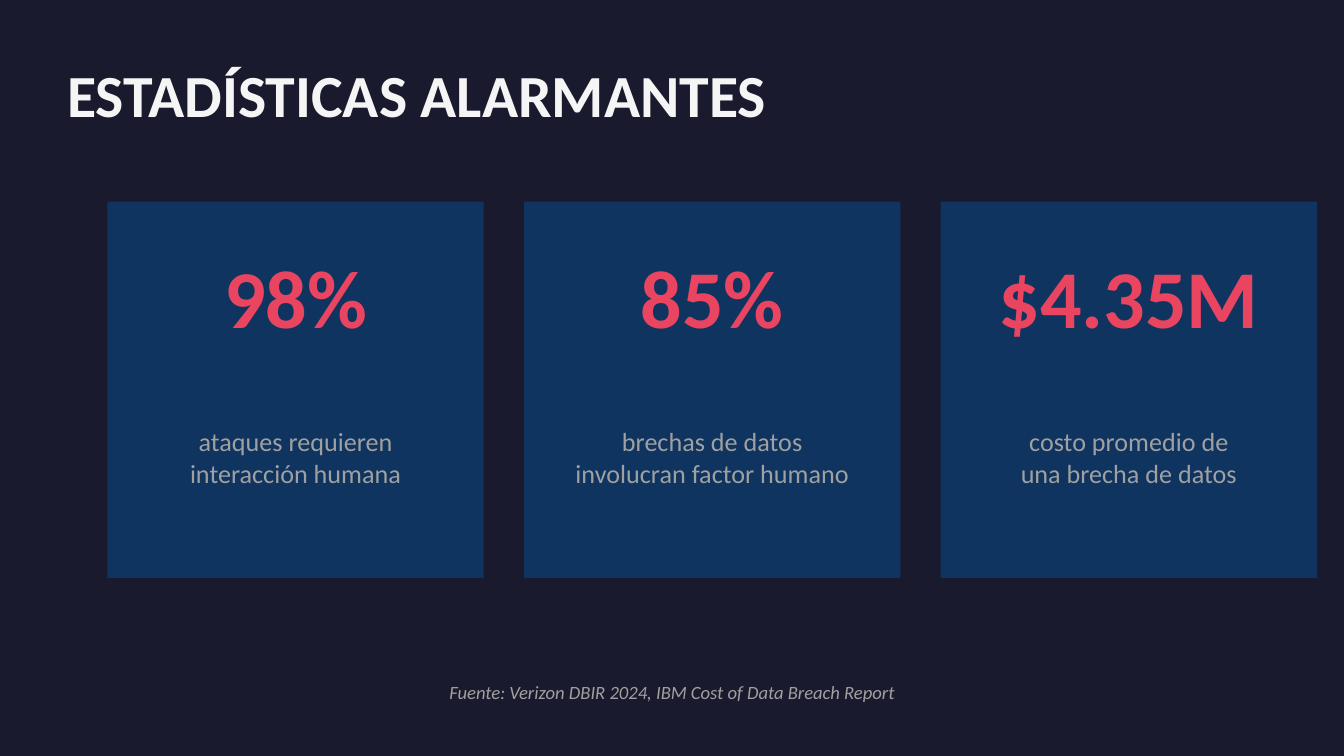
"""Build a slide with three alarming security statistics on cards."""
from pptx import Presentation
from pptx.dml.color import RGBColor
from pptx.enum.shapes import MSO_SHAPE
from pptx.enum.text import MSO_ANCHOR, MSO_AUTO_SIZE, PP_ALIGN
from pptx.util import Emu, Pt

RECTANGLE = MSO_SHAPE.RECTANGLE
MIDDLE = MSO_ANCHOR.MIDDLE
NO_AUTOFIT = MSO_AUTO_SIZE.NONE
LEFT, CENTER = PP_ALIGN.LEFT, PP_ALIGN.CENTER

PX = 4572
TITLE_ONLY = 5
NIGHT, NAVY, CORAL, WHITE, GRAY = "1A1A2E", "0F3460", "E94560", "F5F5F5", "A0A0A0"
FONT = "Calibri"

CARD_LEFT, CARD_TOP, CARD_SIZE, CARD_GAP = 160, 300, 560, 60
STATISTICS = [
    ("98%", "ataques requieren\ninteracción humana"),
    ("85%", "brechas de datos\ninvolucran factor humano"),
    ("$4.35M", "costo promedio de\nuna brecha de datos"),
]


def color(value):
    return RGBColor.from_string(value)


def px(length):
    return Emu(length * PX)


def write(frame, text, size=14, fill=GRAY, bold=False, italic=False, align=CENTER):
    frame.word_wrap = True
    frame.auto_size = NO_AUTOFIT
    frame.vertical_anchor = MIDDLE
    for index, line in enumerate(text.split("\n")):
        para = frame.add_paragraph() if index else frame.paragraphs[0]
        para.alignment = align
        span = para.add_run()
        span.text = line
        span.font.name = FONT
        span.font.size = Pt(size)
        span.font.bold = bold
        span.font.italic = italic
        span.font.color.rgb = color(fill)


class Painter:
    def __init__(self, page):
        self.page = page
        page.background.fill.solid()
        page.background.fill.fore_color.rgb = color(NIGHT)

    def title(self, left, top, width, height, text):
        box = self.page.shapes.title
        box.left, box.top, box.width, box.height = map(px, (left, top, width, height))
        frame = box.text_frame
        frame.margin_left = frame.margin_right = frame.margin_top = frame.margin_bottom = 0
        write(frame, text, size=32, fill=WHITE, bold=True, align=LEFT)

    def panel(self, left, top, width, height, fill):
        panel = self.page.shapes.add_shape(RECTANGLE, *map(px, (left, top, width, height)))
        panel.shadow.inherit = False
        panel.fill.solid()
        panel.fill.fore_color.rgb = color(fill)
        panel.line.fill.background()

    def text(self, left, top, width, height, text, **style):
        box = self.page.shapes.add_textbox(*map(px, (left, top, width, height)))
        write(box.text_frame, text, **style)

    def card(self, left, figure, caption):
        self.panel(left, CARD_TOP, CARD_SIZE, CARD_SIZE, NAVY)
        self.text(left, CARD_TOP + 60, CARD_SIZE, 160, figure, size=44, fill=CORAL, bold=True)
        self.text(left, CARD_TOP + 260, CARD_SIZE, 240, caption)


def main():
    deck = Presentation()
    deck.slide_width, deck.slide_height = px(2000), px(1125)
    painter = Painter(deck.slides.add_slide(deck.slide_layouts[TITLE_ONLY]))
    painter.title(100, 80, 1800, 120, "ESTADÍSTICAS ALARMANTES")
    for index, (figure, caption) in enumerate(STATISTICS):
        painter.card(CARD_LEFT + index * (CARD_SIZE + CARD_GAP), figure, caption)
    painter.text(100, 1000, 1800, 60, "Fuente: Verizon DBIR 2024, IBM Cost of Data Breach Report",
                 size=10, italic=True)
    deck.save("out.pptx")


if __name__ == "__main__":
    main()
